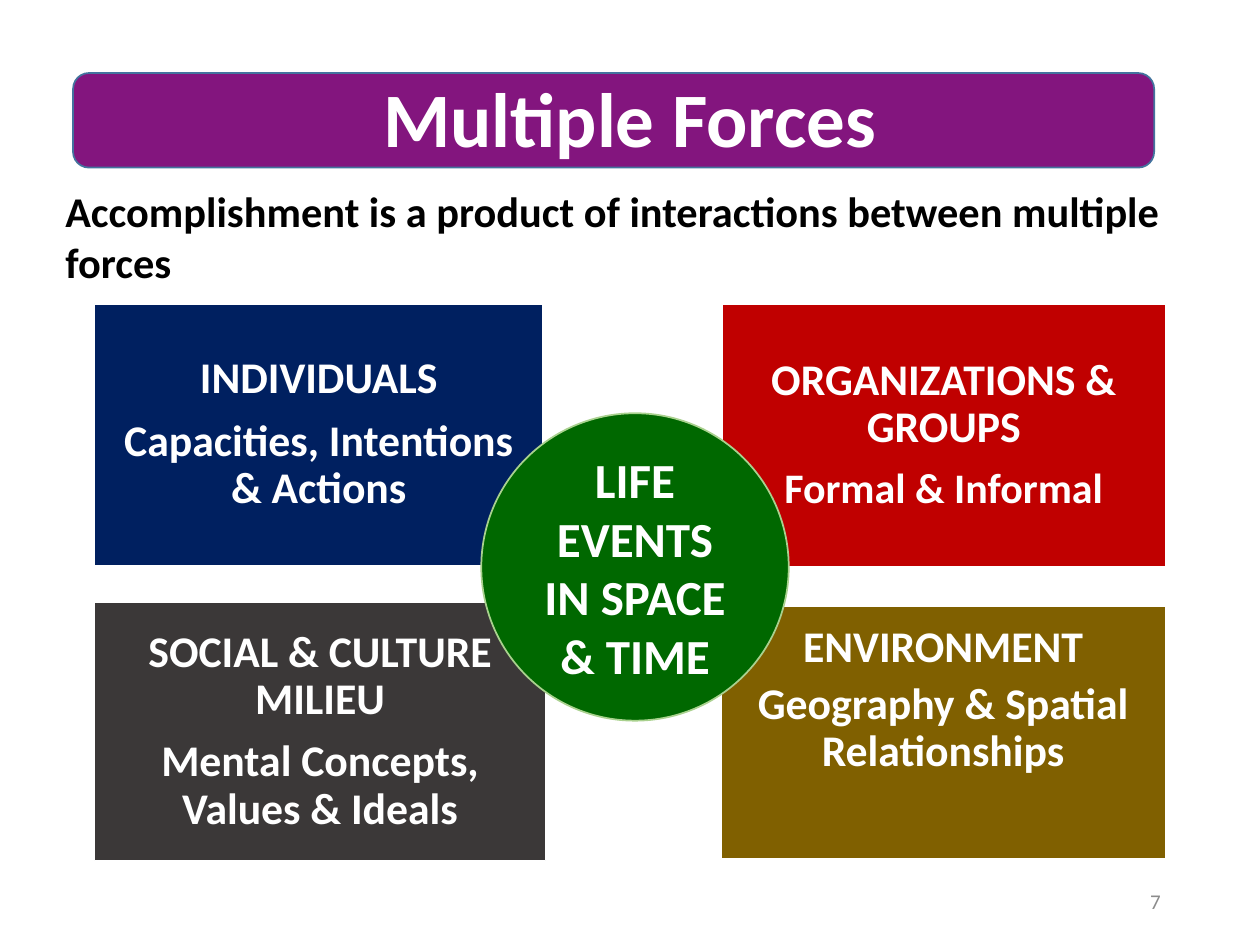
from dataclasses import dataclass

from pptx import Presentation
from pptx.dml.color import RGBColor
from pptx.enum import shapes, text
from pptx.util import Inches, Pt


@dataclass(frozen=True)
class Theme:
    font: str = "Calibri"
    white: str = "FFFFFF"
    black: str = "000000"
    grey: str = "8C8C8C"
    purple: str = "83157E"
    steel: str = "43739E"
    navy: str = "002060"
    red: str = "C00000"
    charcoal: str = "3B3838"
    olive: str = "806000"
    green: str = "006800"
    light_green: str = "A9D18E"
    title: float = 44
    statement: float = 24.2
    force: float = 25
    informal: float = 24
    hub: float = 28
    number: float = 12


class ForcesSlide:
    def __init__(self, deck, theme):
        self.theme = theme
        self.slide = deck.slides.add_slide(deck.slide_layouts[6])

    def shape(self, kind, box, fill, line):
        figure = self.slide.shapes.add_shape(kind, *map(Inches, box))
        figure.shadow.inherit = False
        figure.fill.solid()
        figure.fill.fore_color.rgb = RGBColor.from_string(fill)
        figure.line.color.rgb = RGBColor.from_string(line)
        figure.line.width = Pt(1)
        return figure

    def set_text(self, figure, wording, size, color, align, anchor, bold=True):
        frame = figure.text_frame
        frame.text = wording
        frame.word_wrap = True
        frame.vertical_anchor = anchor
        for paragraph in frame.paragraphs:
            paragraph.alignment = align
            for run in paragraph.runs:
                run.font.name = self.theme.font
                run.font.size = Pt(size)
                run.font.bold = bold
                run.font.color.rgb = RGBColor.from_string(color)
        return frame

    def label(self, box, *style, **options):
        return self.set_text(self.slide.shapes.add_textbox(*map(Inches, box)), *style, **options)

    def force(self, box, fill, heading, detail, anchor=text.MSO_ANCHOR.MIDDLE):
        panel = self.shape(shapes.MSO_SHAPE.RECTANGLE, box, fill, self.theme.white)
        frame = self.set_text(panel, f"{heading}\n{detail}", self.theme.force, self.theme.white,
                              text.PP_ALIGN.CENTER, anchor)
        frame.margin_left = frame.margin_right = Inches(0.1)
        frame.margin_top = frame.margin_bottom = Inches(0.1)
        for paragraph in frame.paragraphs:
            paragraph.line_spacing = 0.9
            paragraph.space_after = Pt(0.35 * self.theme.force)
        return frame

    def hub(self, box, wording):
        circle = self.shape(shapes.MSO_SHAPE.OVAL, box, self.theme.green, self.theme.light_green)
        self.set_text(circle, wording, self.theme.hub, self.theme.white,
                      text.PP_ALIGN.CENTER, text.MSO_ANCHOR.MIDDLE)


def main():
    theme = Theme()
    align, anchor = text.PP_ALIGN, text.MSO_ANCHOR
    deck = Presentation()
    deck.slide_width, deck.slide_height = Inches(10), Inches(7.5)
    page = ForcesSlide(deck, theme)

    page.label((7.06, 6.95, 2.25, 0.4), "7", theme.number, theme.grey,
               align.RIGHT, anchor.MIDDLE, bold=False)
    page.shape(shapes.MSO_SHAPE.ROUNDED_RECTANGLE, (0.58, 0.58, 8.58, 0.75),
               theme.purple, theme.steel)
    page.label((0.5, 0.3, 9, 1.25), "Multiple Forces", theme.title, theme.white,
               align.CENTER, anchor.MIDDLE)
    statement = page.label(
        (0.42, 1.42, 9, 0.92),
        "Accomplishment is a product of interactions between multiple forces",
        theme.statement, theme.black, align.LEFT, anchor.TOP)
    statement.paragraphs[0].space_before = Pt(0.2 * theme.statement)

    page.force((0.75, 4.78, 3.58, 2.05), theme.charcoal,
               "SOCIAL & CULTURE MILIEU", "Mental Concepts, Values & Ideals")
    page.force((0.75, 2.41, 3.56, 2.08), theme.navy,
               "INDIVIDUALS", "Capacities, Intentions\v& Actions")
    environment = page.force((5.72, 4.81, 3.53, 2.01), theme.olive,
                             "ENVIRONMENT", "Geography & Spatial Relationships", anchor.TOP)
    environment.paragraphs[0].line_spacing = 1.0
    environment.paragraphs[0].space_after = Pt(6)
    organizations = page.force((5.73, 2.41, 3.52, 2.09), theme.red,
                               "ORGANIZATIONS & GROUPS", "Formal & Informal")
    organizations.paragraphs[1].runs[0].font.size = Pt(theme.informal)
    page.hub((3.82, 3.28, 2.44, 2.44), "LIFE EVENTS IN SPACE & TIME")

    deck.save("out.pptx")


if __name__ == "__main__":
    main()
